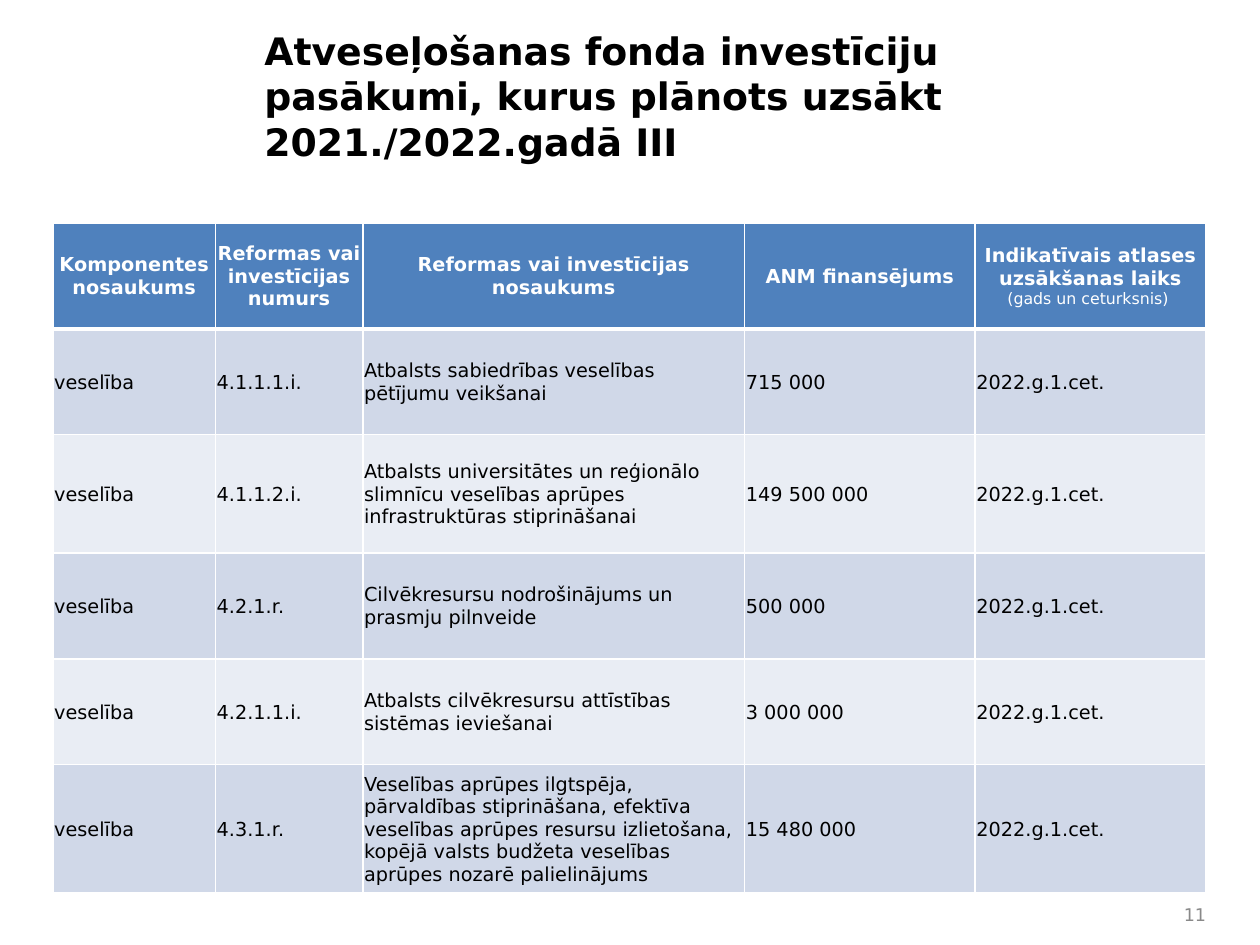
from dataclasses import dataclass

import lxml.etree
import pptx
import pptx.dml.color
import pptx.enum.text
import pptx.oxml.ns
import pptx.util

Inches = pptx.util.Inches
Pt = pptx.util.Pt
RGBColor = pptx.dml.color.RGBColor
Align = pptx.enum.text.PP_ALIGN
Anchor = pptx.enum.text.MSO_ANCHOR
qn = pptx.oxml.ns.qn

FONT = "DejaVu Sans"
BLACK = RGBColor(0x00, 0x00, 0x00)
WHITE = RGBColor(0xFF, 0xFF, 0xFF)
GREY = RGBColor(0x89, 0x89, 0x89)
HEADER_BLUE = RGBColor(0x4F, 0x81, 0xBD)
BANDS = (RGBColor(0xD0, 0xD8, 0xE8), RGBColor(0xE9, 0xED, 0xF4))

TABLE_TOP = 1.77
COLUMN_WIDTHS = (1.29, 1.17, 3.03, 1.83, 1.83)
ROW_HEIGHTS = (0.84, 0.84, 0.94, 0.84, 0.84, 1.02)
HEADINGS = (
    "Komponentes nosaukums",
    "Reformas vai investīcijas numurs",
    "Reformas vai investīcijas nosaukums",
    "ANM finansējums",
    "Indikatīvais atlases uzsākšanas laiks ",
)


@dataclass(frozen=True)
class Measure:
    number: str
    name: str
    funding: str
    component: str = "veselība"
    start: str = "2022.g.1.cet."

    def texts(self) -> tuple[str, ...]:
        return self.component, self.number, self.name, self.funding, self.start


MEASURES = (
    Measure("4.1.1.1.i.", "Atbalsts sabiedrības veselības pētījumu veikšanai", "715 000"),
    Measure(
        "4.1.1.2.i.",
        "Atbalsts universitātes un reģionālo slimnīcu veselības aprūpes "
        "infrastruktūras stiprināšanai",
        "149 500 000",
    ),
    Measure("4.2.1.r.", "Cilvēkresursu nodrošinājums un prasmju pilnveide", "500 000"),
    Measure("4.2.1.1.i.", "Atbalsts cilvēkresursu attīstības sistēmas ieviešanai", "3 000 000"),
    Measure(
        "4.3.1.r.",
        "Veselības aprūpes ilgtspēja, pārvaldības stiprināšana, efektīva "
        "veselības aprūpes resursu izlietošana, kopējā valsts budžeta veselības "
        "aprūpes nozarē palielinājums",
        "15 480 000",
    ),
)


def write(frame, text: str, *, size: float = 11, color: RGBColor = BLACK,
          bold: bool = False, align: Align = Align.LEFT) -> None:
    paragraph = frame.paragraphs[0]
    paragraph.alignment = align
    run = paragraph.add_run()
    run.text = text
    run.font.name = FONT
    run.font.size = Pt(size)
    run.font.bold = bold
    run.font.color.rgb = color


def add_text_area(slide, left: float, top: float, width: float, height: float,
                  anchor: Anchor):
    frame = slide.shapes.add_textbox(
        Inches(left), Inches(top), Inches(width), Inches(height)).text_frame
    frame.word_wrap = True
    frame.vertical_anchor = anchor
    return frame


def add_border(cell, side: str, width: float) -> None:
    properties = cell._tc.get_or_add_tcPr()
    line = lxml.etree.SubElement(properties, qn(f"a:ln{side}"), w=str(Pt(width)))
    fill = lxml.etree.SubElement(line, qn("a:solidFill"))
    lxml.etree.SubElement(fill, qn("a:srgbClr"), val=str(WHITE))


def style_cell(cell, row: int) -> None:
    cell.margin_left = cell.margin_right = cell.margin_top = Inches(0.01)
    cell.margin_bottom = 0
    cell.vertical_anchor = Anchor.MIDDLE
    for side in "LRTB":
        beside_header_rule = (row, side) in ((0, "B"), (1, "T"))
        add_border(cell, side, 3 if beside_header_rule else 1)
    cell.fill.solid()
    cell.fill.fore_color.rgb = BANDS[(row - 1) % 2] if row else HEADER_BLUE


def add_measures_table(slide) -> None:
    table = slide.shapes.add_table(
        len(ROW_HEIGHTS), len(COLUMN_WIDTHS), Inches(0.42), Inches(TABLE_TOP),
        Inches(sum(COLUMN_WIDTHS)), Inches(sum(ROW_HEIGHTS))).table
    for column, width in zip(table.columns, COLUMN_WIDTHS):
        column.width = Inches(width)
    for row, height in zip(table.rows, ROW_HEIGHTS):
        row.height = Inches(height)

    contents = (HEADINGS, *(measure.texts() for measure in MEASURES))
    for row, texts in enumerate(contents):
        for column, text in enumerate(texts):
            cell = table.cell(row, column)
            style_cell(cell, row)
            if row:
                write(cell.text_frame, text)
            else:
                write(cell.text_frame, text, color=WHITE, bold=True, align=Align.CENTER)
    write(table.cell(0, len(HEADINGS) - 1).text_frame, "(gads un ceturksnis) ",
          size=9, color=WHITE, align=Align.CENTER)


def main() -> None:
    presentation = pptx.Presentation()
    presentation.slide_width = Inches(10)
    presentation.slide_height = Inches(7.5)
    slide = presentation.slides.add_slide(presentation.slide_layouts[6])

    title = add_text_area(slide, 2, 0.17, 6.67, 1.13, Anchor.TOP)
    write(title, "Atveseļošanas fonda investīciju pasākumi, kurus plānots uzsākt "
          "2021./2022.gadā III", size=21.6, bold=True)
    add_measures_table(slide)
    table_bottom = TABLE_TOP + sum(ROW_HEIGHTS)
    page_number = add_text_area(slide, 9.21, table_bottom, 0.46, 0.33, Anchor.MIDDLE)
    write(page_number, "11", size=10, color=GREY, align=Align.RIGHT)

    presentation.save("out.pptx")


if __name__ == "__main__":
    main()
